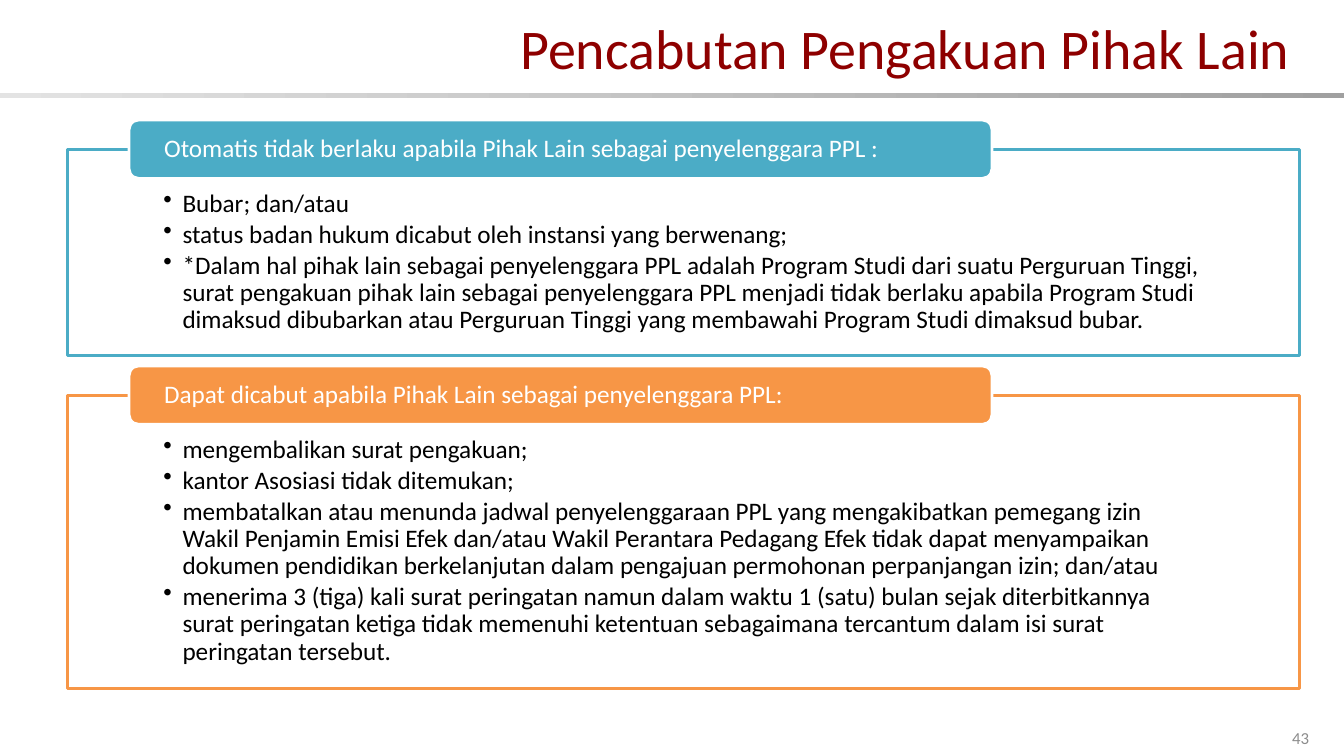
from dataclasses import dataclass
from typing import Any

from lxml import etree
from pptx import Presentation
from pptx import util as u
from pptx.dml.color import RGBColor
from pptx.enum import shapes, text
from pptx.oxml import ns

PX = 9144  # EMU in one px, 100 px to the inch
WIDE, HIGH = 1333, 750

WHITE = RGBColor(0xFF, 0xFF, 0xFF)
BLACK = RGBColor(0x00, 0x00, 0x00)
MAROON = RGBColor(0x8E, 0x00, 0x00)
GRAY = RGBColor(0x8C, 0x8C, 0x8C)
PALE = RGBColor(0xE3, 0xE3, 0xE3)
STEEL = RGBColor(0xA0, 0xA0, 0xA0)
TEAL = RGBColor(0x4B, 0xAC, 0xC6)
ORANGE = RGBColor(0xF7, 0x96, 0x46)

RECT = shapes.MSO_SHAPE.RECTANGLE
ROUND = shapes.MSO_SHAPE.ROUNDED_RECTANGLE
MIDDLE = text.MSO_ANCHOR.MIDDLE
LEFT, MID, RIGHT = text.PP_ALIGN.LEFT, text.PP_ALIGN.CENTER, text.PP_ALIGN.RIGHT


@dataclass(frozen=True)
class Box:
    x: int
    y: int
    w: int
    h: int


@dataclass(frozen=True)
class Style:
    size: int
    color: RGBColor
    align: Any = LEFT
    anchor: Any = MIDDLE
    inset: tuple[int, int, int, int] = (10, 5, 10, 5)
    space: float = 1.0
    after: float = 0
    bullet: bool = False


@dataclass(frozen=True)
class Panel:
    top: int
    high: int
    color: RGBColor
    head: str
    items: tuple[str, ...]


TITLE = Style(40, MAROON, RIGHT)
HEAD = Style(18, WHITE, inset=(32, 0, 32, 0), space=0.9)
BODY = Style(18, BLACK, anchor=text.MSO_ANCHOR.TOP, inset=(95, 41, 95, 14),
             space=0.9, after=2.7, bullet=True)
NUMBER = Style(12, GRAY, MID)

PANELS = (
    Panel(148, 205, TEAL, "Otomatis tidak berlaku apabila Pihak Lain sebagai penyelenggara PPL :", (
        "Bubar; dan/atau",
        "status badan hukum dicabut oleh instansi yang berwenang;",
        "*Dalam hal pihak lain sebagai penyelenggara PPL adalah Program Studi dari suatu "
        "Perguruan Tinggi, surat pengakuan pihak lain sebagai penyelenggara PPL menjadi tidak "
        "berlaku apabila Program Studi dimaksud dibubarkan atau Perguruan Tinggi yang membawahi "
        "Program Studi dimaksud bubar.",
    )),
    Panel(392, 291, ORANGE, "Dapat dicabut apabila Pihak Lain sebagai penyelenggara PPL:", (
        "mengembalikan surat pengakuan;",
        "kantor Asosiasi tidak ditemukan;",
        "membatalkan atau menunda jadwal penyelenggaraan PPL yang mengakibatkan pemegang izin "
        "Wakil Penjamin Emisi Efek dan/atau Wakil Perantara Pedagang Efek tidak dapat "
        "menyampaikan dokumen pendidikan berkelanjutan dalam pengajuan permohonan perpanjangan "
        "izin; dan/atau",
        "menerima 3 (tiga) kali surat peringatan namun dalam waktu 1 (satu) bulan sejak "
        "diterbitkannya surat peringatan ketiga tidak memenuhi ketentuan sebagaimana tercantum "
        "dalam isi surat peringatan tersebut.",
    )),
)


def assign(obj: Any, values: dict[str, Any]) -> None:
    for name, value in values.items():
        setattr(obj, name, value)


def emu(box: Box) -> list[int]:
    return [n * PX for n in (box.x, box.y, box.w, box.h)]


def write(shape: Any, lines: tuple[str, ...], style: Style) -> None:
    frame = shape.text_frame
    left, top, right, bottom = (n * PX for n in style.inset)
    assign(frame, {"word_wrap": True, "vertical_anchor": style.anchor,
                   "margin_left": left, "margin_top": top,
                   "margin_right": right, "margin_bottom": bottom})
    for i, line in enumerate(lines):
        para = frame.paragraphs[0] if i == 0 else frame.add_paragraph()
        para.text = line
        assign(para, {"alignment": style.align, "line_spacing": style.space,
                      "space_after": u.Pt(style.after)})
        if style.bullet:
            props = para._p.get_or_add_pPr()
            props.set("marL", str(19 * PX))
            props.set("indent", str(-19 * PX))
            etree.SubElement(props, ns.qn("a:buChar")).set("char", "•")
        assign(para.font, {"name": "Calibri", "size": u.Pt(style.size)})
        para.font.color.rgb = style.color


def draw(slide: Any, kind: Any, box: Box, fill: RGBColor, line: RGBColor | None = None) -> Any:
    shape = slide.shapes.add_shape(kind, *emu(box))
    shape.shadow.inherit = False
    shape.fill.solid()
    shape.fill.fore_color.rgb = fill
    if line is None:
        shape.line.fill.background()
    else:
        shape.line.color.rgb = line
        shape.line.width = u.Pt(2)
    return shape


def panel(slide: Any, part: Panel) -> None:
    frame = draw(slide, RECT, Box(67, part.top, 1222, part.high), WHITE, part.color)
    write(frame, part.items, BODY)
    tab = draw(slide, ROUND, Box(128, part.top - 29, 856, 58), part.color, WHITE)
    write(tab, (part.head,), HEAD)


def main() -> None:
    deck = Presentation()
    assign(deck, {"slide_width": WIDE * PX, "slide_height": HIGH * PX})
    slide = deck.slides.add_slide(deck.slide_layouts[6])

    # Rule under the title
    rule = draw(slide, RECT, Box(0, 92, WIDE, 5), PALE)
    rule.fill.gradient()
    rule.fill.gradient_angle = 0
    for stop, color in zip(rule.fill.gradient_stops, (PALE, STEEL)):
        stop.color.rgb = color

    # Title
    title = slide.shapes.add_textbox(*emu(Box(202, 17, 1087, 59)))
    write(title, ("Pencabutan Pengakuan Pihak Lain",), TITLE)

    # Framed lists
    for part in PANELS:
        panel(slide, part)

    # Page number
    write(draw(slide, RECT, Box(1267, 710, 46, 44), WHITE), ("43",), NUMBER)

    deck.save("out.pptx")


if __name__ == "__main__":
    main()
